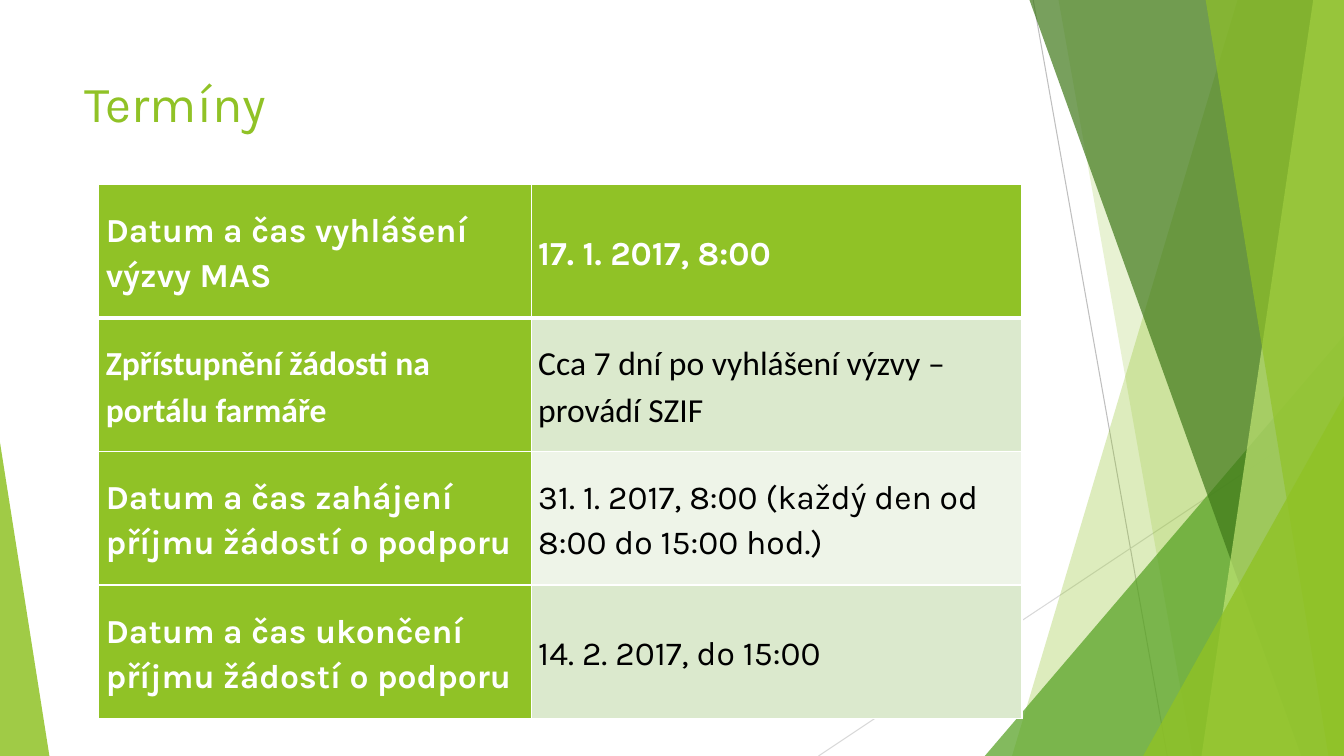
"""Build the schedule slide with its green shard backdrop and date table."""
from dataclasses import dataclass

from lxml.etree import SubElement
from pptx import Presentation
from pptx.dml.color import RGBColor
from pptx.enum.shapes import MSO_CONNECTOR as Connector, MSO_SHAPE as Preset
from pptx.enum.text import MSO_ANCHOR as Anchor
from pptx.oxml import parse_xml
from pptx.oxml.ns import nsdecls, qn
from pptx.util import Pt

WIDTH, HEIGHT = 960, 540
SHARD_TOP = -0.72
GREEN, WHITE, BLACK = "90C226", "FFFFFF", "000000"
PALE, PALER = "DBE9CD", "EEF4E8"


@dataclass
class Ray:
    start: tuple[float, float]
    end: tuple[float, float]
    color: str


@dataclass
class Shard:
    top_x: float
    bottom_x: float
    color: str
    opacity: int


@dataclass
class Wedge:
    left: float
    top: float
    width: float
    apex: float
    color: str
    opacity: int


@dataclass
class Deadline:
    event: str
    date: str
    fill: str
    font: str = "Karla"


RAYS = [
    Ray((738, 0), (833.76, HEIGHT), "BFBFBF"),
    Ray((WIDTH, 290.16), (584.64, HEIGHT), "D9D9D9"),
]
BACKDROP = [
    Shard(884.16, 722.88, GREEN, 30),
    Shard(756, 851.76, GREEN, 20),
    Wedge(703.44, 239.76, 256.56, 1, "54A021", 72),
    Shard(735.12, 929.52, "3F7819", 70),
    Shard(938.16, 858.24, "C0E474", 70),
    Shard(861.12, 948.96, GREEN, 65),
    Wedge(816.48, 282.96, 143.52, 1, GREEN, 80),
    Wedge(0, 316.08, 35.28, 0, GREEN, 85),
]
DEADLINES = [
    Deadline("Datum a čas vyhlášení výzvy MAS", "17. 1. 2017, 8:00", GREEN),
    Deadline("Zpřístupnění žádosti na portálu farmáře",
             "Cca 7 dní po vyhlášení výzvy – provádí SZIF", PALE, "Calibri"),
    Deadline("Datum a čas zahájení příjmu žádostí o podporu",
             "31. 1. 2017, 8:00 (každý den od 8:00 do 15:00 hod.)", PALER),
    Deadline("Datum a čas ukončení příjmu žádostí o podporu",
             "14. 2. 2017, do 15:00", PALE),
]


def rgb(color: str) -> RGBColor:
    return RGBColor.from_string(color)


def write(frame, text: str, *, size: float, color: str, font: str = "Karla",
          bold: bool = False, spacing: float = 1.0) -> None:
    para = frame.paragraphs[0]
    para.line_spacing = spacing
    span = para.add_run()
    span.text = text
    span.font.size = Pt(size)
    span.font.name = font
    span.font.bold = bold
    span.font.color.rgb = rgb(color)


def draw_ray(page, ray: Ray) -> None:
    line = page.shapes.add_connector(
        Connector.STRAIGHT, *map(Pt, ray.start + ray.end))
    line.line.color.rgb = rgb(ray.color)
    line.line.width = Pt(0.75)
    SubElement(line.element.spPr, qn("a:effectLst"))


def draw_backdrop(page, part: Shard | Wedge) -> None:
    if isinstance(part, Shard):
        builder = page.shapes.build_freeform(Pt(part.top_x), Pt(SHARD_TOP))
        corners = [(WIDTH, SHARD_TOP), (WIDTH, HEIGHT), (part.bottom_x, HEIGHT)]
        builder.add_line_segments([(Pt(x), Pt(y)) for x, y in corners])
        shape = builder.convert_to_shape()
    else:
        shape = page.shapes.add_shape(
            Preset.ISOSCELES_TRIANGLE, Pt(part.left), Pt(part.top),
            Pt(part.width), Pt(HEIGHT - part.top))
        shape.adjustments[0] = part.apex
    shape.shadow.inherit = False
    shape.line.fill.background()
    shape.fill.solid()
    shape.fill.fore_color.rgb = rgb(part.color)
    tint = shape.element.spPr.find(f"{qn('a:solidFill')}/{qn('a:srgbClr')}")
    SubElement(tint, qn("a:alpha"), val=str(part.opacity * 1000))


def set_borders(cell, **widths: float) -> None:
    properties = cell._tc.get_or_add_tcPr()
    for index, side in enumerate("LRTB"):
        width = Pt(widths.get(side, 1))
        properties.insert(index, parse_xml(
            f'<a:ln{side} {nsdecls("a")} w="{width}"><a:solidFill>'
            f'<a:srgbClr val="{WHITE}"/></a:solidFill></a:ln{side}>'))


def draw_table(page, deadlines: list[Deadline]) -> None:
    widths, row_height = (308.88, 350.64), 95.4
    table = page.shapes.add_table(
        len(deadlines), len(widths), Pt(70.56), Pt(131.76),
        Pt(sum(widths)), Pt(row_height * len(deadlines))).table
    table.horz_banding = False
    for column, width in zip(table.columns, widths):
        column.width = Pt(width)
    for index, deadline in enumerate(deadlines):
        table.rows[index].height = Pt(row_height)
        entries = [(deadline.event, GREEN), (deadline.date, deadline.fill)]
        for cell, (text, fill) in zip(table.rows[index].cells, entries):
            cell.vertical_anchor = Anchor.MIDDLE
            cell.margin_left = cell.margin_right = Pt(5.04)
            cell.margin_top = cell.margin_bottom = Pt(0)
            cell.fill.solid()
            cell.fill.fore_color.rgb = rgb(fill)
            strong = fill == GREEN
            write(cell.text_frame, text, size=24, font=deadline.font,
                  color=WHITE if strong else BLACK, bold=strong, spacing=1.15)
            set_borders(cell, T=3 if index == 1 else 1, B=3 if index == 0 else 1)


def main() -> None:
    deck = Presentation()
    deck.slide_width, deck.slide_height = Pt(WIDTH), Pt(HEIGHT)
    page = deck.slides.add_slide(deck.slide_layouts[6])
    for ray in RAYS:
        draw_ray(page, ray)
    for part in BACKDROP:
        draw_backdrop(page, part)
    box = page.shapes.add_textbox(Pt(53.28), Pt(48.24), Pt(676.8), Pt(103.68))
    box.text_frame.word_wrap = True
    write(box.text_frame, "Termíny", size=36, color=GREEN)
    draw_table(page, DEADLINES)
    deck.save("out.pptx")


if __name__ == "__main__":
    main()
